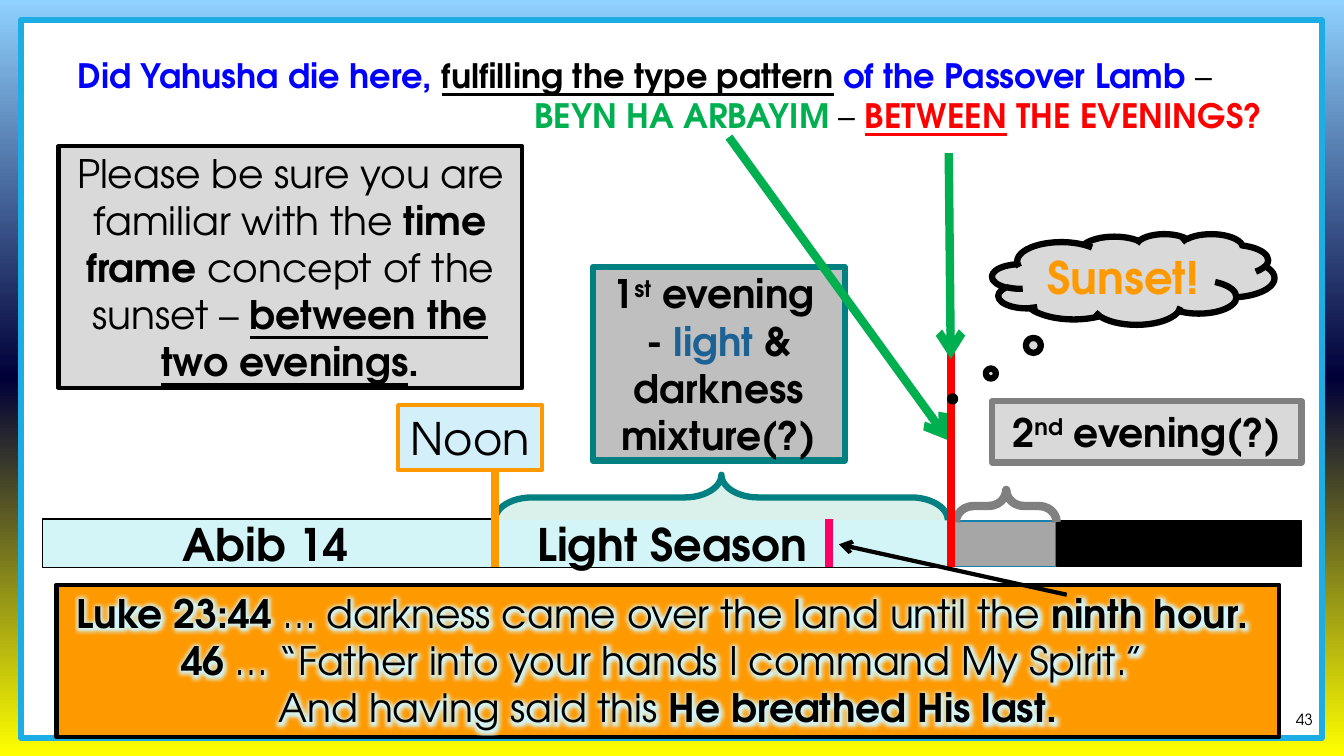
"""Build the slide on the Abib 14 timeline and the time between the evenings."""
from copy import deepcopy
from dataclasses import dataclass

from lxml import etree
from pptx import Presentation
from pptx.dml.color import RGBColor
from pptx.enum.shapes import MSO_CONNECTOR, MSO_SHAPE
from pptx.enum.text import MSO_ANCHOR, PP_ALIGN
from pptx.oxml.ns import qn
from pptx.util import Inches, Pt

RECT, BRACE, CLOUD = MSO_SHAPE.RECTANGLE, MSO_SHAPE.LEFT_BRACE, MSO_SHAPE.CLOUD_CALLOUT
STRAIGHT = MSO_CONNECTOR.STRAIGHT
LEFT, CENTER, RIGHT = PP_ALIGN.LEFT, PP_ALIGN.CENTER, PP_ALIGN.RIGHT
TOP, MIDDLE, BOTTOM = MSO_ANCHOR.TOP, MSO_ANCHOR.MIDDLE, MSO_ANCHOR.BOTTOM
FONT = "TeX Gyre Adventor"

COLORS = {
    "sky": "8FD1FF", "night": "000038", "sun": "FFFF00",
    "white": "FFFFFF", "black": "000000", "frame": "1CADE4",
    "blue": "0000FF", "green": "00B050", "red": "FF0000", "pink": "FF0066",
    "orange": "FF9900", "teal": "008080", "mint": "D9F1EA", "day": "D4F5F7",
    "noon": "D2EFFA", "light": "1D6294", "dusk": "A6A6A6", "dusk_edge": "1580A9",
    "gray": "808080", "mid_gray": "BFBFBF", "pale_gray": "D9D9D9",
}


@dataclass
class Run:
    text: str
    bold: bool | None = None
    color: str | None = None
    underline: bool | None = None
    superscript: bool = False


@dataclass
class Paragraph:
    runs: list[Run]
    size: float
    bold: bool = False
    color: str = "black"
    align: PP_ALIGN = CENTER
    tab: float | None = None


@dataclass
class Box:
    at: tuple[float, float, float, float]
    fill: str | None = None
    edge: str | None = None
    width: float = 1
    text: tuple[Paragraph, ...] = ()
    kind: MSO_SHAPE = RECT
    adjust: tuple[float, ...] = ()
    turn: float = 0
    anchor: MSO_ANCHOR = MIDDLE
    margins: tuple[float, float, float, float] = (0.1, 0.05, 0.1, 0.05)
    glow: str | None = None


@dataclass
class Line:
    start: tuple[float, float]
    end: tuple[float, float]
    color: str
    width: float = 6
    arrow: bool = False


QUESTION = (
    Paragraph([Run("Did Yahusha die here, "),
               Run("fulfilling the type pattern", color="black", underline=True),
               Run(" of the Passover Lamb "),
               Run("–", bold=False, color="black")], 24, True, "blue", LEFT),
    Paragraph([Run("BEYN HA ARBAYIM", color="green"),
               Run(" – ", bold=False, color="black"),
               Run("BETWEEN", underline=True),
               Run(" THE EVENINGS?")], 24, True, "red", RIGHT),
)
FIRST_EVENING = (
    Paragraph([Run("1"), Run("st", superscript=True), Run(" evening ")], 28, True),
    Paragraph([Run("- "), Run("light", color="light"),
               Run(" & darkness mixture(?)")], 28, True),
)
SECOND_EVENING = (
    Paragraph([Run("2"), Run("nd", superscript=True), Run(" evening(?)")], 28, True),
)
REMINDER = (
    Paragraph([Run("Please be sure you are familiar with the "),
               Run("time frame ", bold=True),
               Run("concept of the sunset – "),
               Run("between the two evenings", bold=True, underline=True),
               Run(".", bold=True)], 28),
)
VERSES = (
    Paragraph([Run("Luke 23:44 ", bold=True),
               Run("… darkness came over the land until the "),
               Run("ninth hour. ", bold=True)], 28),
    Paragraph([Run("46", bold=True),
               Run(" … “Father into your hands I command My Spirit.” ")], 28),
    Paragraph([Run("And having said this "),
               Run("He breathed His last.", bold=True)], 28),
)
DAY = (Paragraph([Run("Abib 14\tLight Season")], 32, True, align=LEFT, tab=3.52),)
NOON = (Paragraph([Run("Noon")], 32),)
SUNSET = (Paragraph([Run("Sunset!")], 32, True, "orange"),)
NUMBER = (Paragraph([Run("43")], 11, align=RIGHT),)

PARTS: list[Box | Line] = [
    Box((0.21, 0.2, 12.9, 7.12), "white", "frame", 4.5, QUESTION,
        anchor=TOP, margins=(0.56, 0.34, 0.59, 0.05)),
    Box((0.42, 5.15, 8.98, 0.48), "day", "black", 1, DAY, margins=(1.39, 0.05, 0.1, 0.05)),
    Box((9.47, 5.17, 1, 0.45), "dusk", "dusk_edge"),
    Box((6.93, 2.69, 0.45, 4.49), "mint", "teal", 4.5,
        kind=BRACE, adjust=(0.81, 0.5), turn=90),
    Line((4.91, 5.63), (4.91, 4.66), "orange"),
    Box((5.88, 2.65, 2.5, 1.92), "mid_gray", "teal", 4.5, FIRST_EVENING),
    Box((3.95, 4.02, 1.43, 0.64), "noon", "orange", 3, NOON),
    Box((10.48, 5.17, 2.43, 0.45), "black", "black"),
    Box((9.82, 4.52, 0.32, 1), None, "gray", 6, kind=BRACE, adjust=(0.55, 0.5), turn=90),
    Box((9.84, 3.98, 3.07, 0.61), "pale_gray", "gray", 4.5, SECOND_EVENING),
    Line((7.23, 1.36), (9.41, 4.37), "green", arrow=True),
    Box((0.58, 1.45, 4.6, 2.4), "pale_gray", "black", 3, REMINDER),
    Box((0.56, 5.8, 12.13, 1.51), "orange", "black", 3, VERSES, anchor=TOP, glow="day"),
    Line((8.22, 5.15), (8.22, 5.63), "pink"),
    Line((9.43, 5.63), (9.43, 3.45), "red"),
    Line((10.58, 5.9), (8.32, 5.4), "black", 3, True),
    Line((9.41, 1.52), (9.43, 3.56), "green", arrow=True),
    Box((9.84, 2.32, 2.8, 0.9), "pale_gray", "black", 4.5, SUNSET,
        kind=CLOUD, adjust=(-0.64, 1.32)),
    Box((12.64, 6.98, 0.48, 0.3), text=NUMBER, anchor=BOTTOM),
]


def rgb(name: str) -> RGBColor:
    return RGBColor.from_string(COLORS[name])


def paint_background(slide) -> None:
    fill = slide.background.fill
    fill.gradient()
    fill.gradient_angle = 270
    stops = slide.element.find(".//" + qn("a:gsLst"))
    stops.insert(1, deepcopy(stops[0]))
    for stop, name, position in zip(fill.gradient_stops, ("sky", "night", "sun"), (0, 0.5, 1)):
        stop.color.rgb = rgb(name)
        stop.position = position


def write_paragraph(paragraph, content: Paragraph, glow: str | None) -> None:
    paragraph.alignment = content.align
    paragraph.space_before = Pt(0)
    font = paragraph.font
    font.name, font.size, font.bold = FONT, Pt(content.size), content.bold
    font.color.rgb = rgb(content.color)
    if content.tab:
        tabs = etree.Element(qn("a:tabLst"))
        etree.SubElement(tabs, qn("a:tab"), pos=str(Inches(content.tab)), algn="l")
        paragraph._p.pPr.find(qn("a:defRPr")).addprevious(tabs)
    for part in content.runs:
        run = paragraph.add_run()
        run.text = part.text
        run.font.bold, run.font.underline = part.bold, part.underline
        if part.color:
            run.font.color.rgb = rgb(part.color)
        properties = run._r.get_or_add_rPr()
        if part.superscript:
            properties.set("baseline", "30000")
        if glow:
            effects = etree.SubElement(properties, qn("a:effectLst"))
            halo = etree.SubElement(effects, qn("a:glow"), rad=str(Pt(8)))
            etree.SubElement(halo, qn("a:srgbClr"), val=COLORS[glow])


def draw_box(slide, box: Box) -> None:
    place = [Inches(length) for length in box.at]
    if box.edge:
        shape = slide.shapes.add_shape(box.kind, *place)
        shape.shadow.inherit = False
        shape.rotation = box.turn
        for index, value in enumerate(box.adjust):
            shape.adjustments[index] = value
        shape.line.color.rgb = rgb(box.edge)
        shape.line.width = Pt(box.width)
        if box.fill:
            shape.fill.solid()
            shape.fill.fore_color.rgb = rgb(box.fill)
        else:
            shape.fill.background()
    else:
        shape = slide.shapes.add_textbox(*place)
    frame = shape.text_frame
    frame.word_wrap = True
    frame.vertical_anchor = box.anchor
    (frame.margin_left, frame.margin_top,
     frame.margin_right, frame.margin_bottom) = map(Inches, box.margins)
    for index, content in enumerate(box.text):
        paragraph = frame.add_paragraph() if index else frame.paragraphs[0]
        write_paragraph(paragraph, content, box.glow)


def draw_line(slide, line: Line) -> None:
    connector = slide.shapes.add_connector(STRAIGHT, *map(Inches, line.start + line.end))
    connector.line.color.rgb = rgb(line.color)
    connector.line.width = Pt(line.width)
    if line.arrow:
        etree.SubElement(connector.line._get_or_add_ln(), qn("a:tailEnd"), type="arrow")
    etree.SubElement(connector.element.spPr, qn("a:effectLst"))


def main() -> None:
    deck = Presentation()
    deck.slide_width, deck.slide_height = Inches(13.33), Inches(7.5)
    slide = deck.slides.add_slide(deck.slide_layouts[6])
    paint_background(slide)
    for part in PARTS:
        if isinstance(part, Box):
            draw_box(slide, part)
        else:
            draw_line(slide, part)
    deck.save("out.pptx")


if __name__ == "__main__":
    main()
